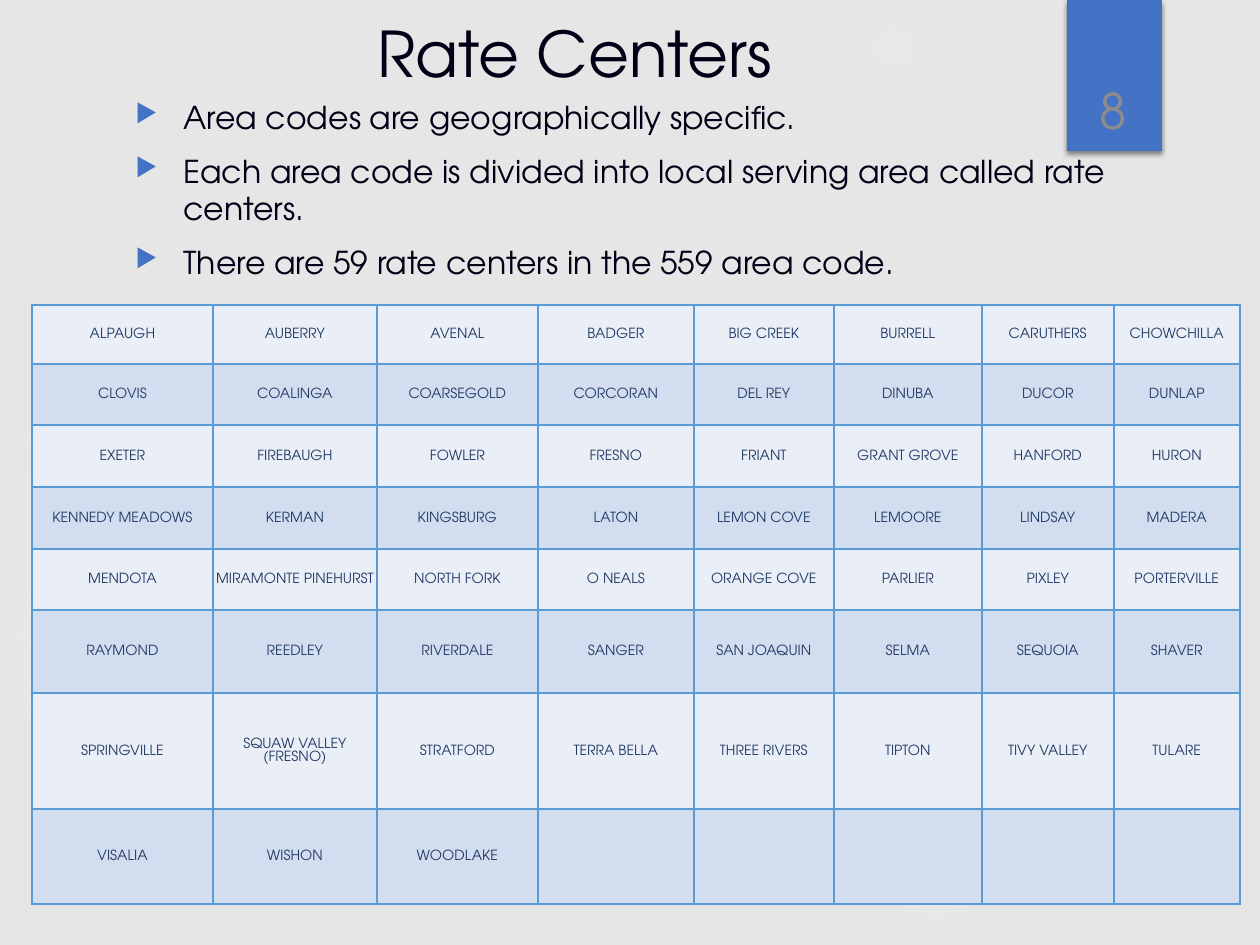
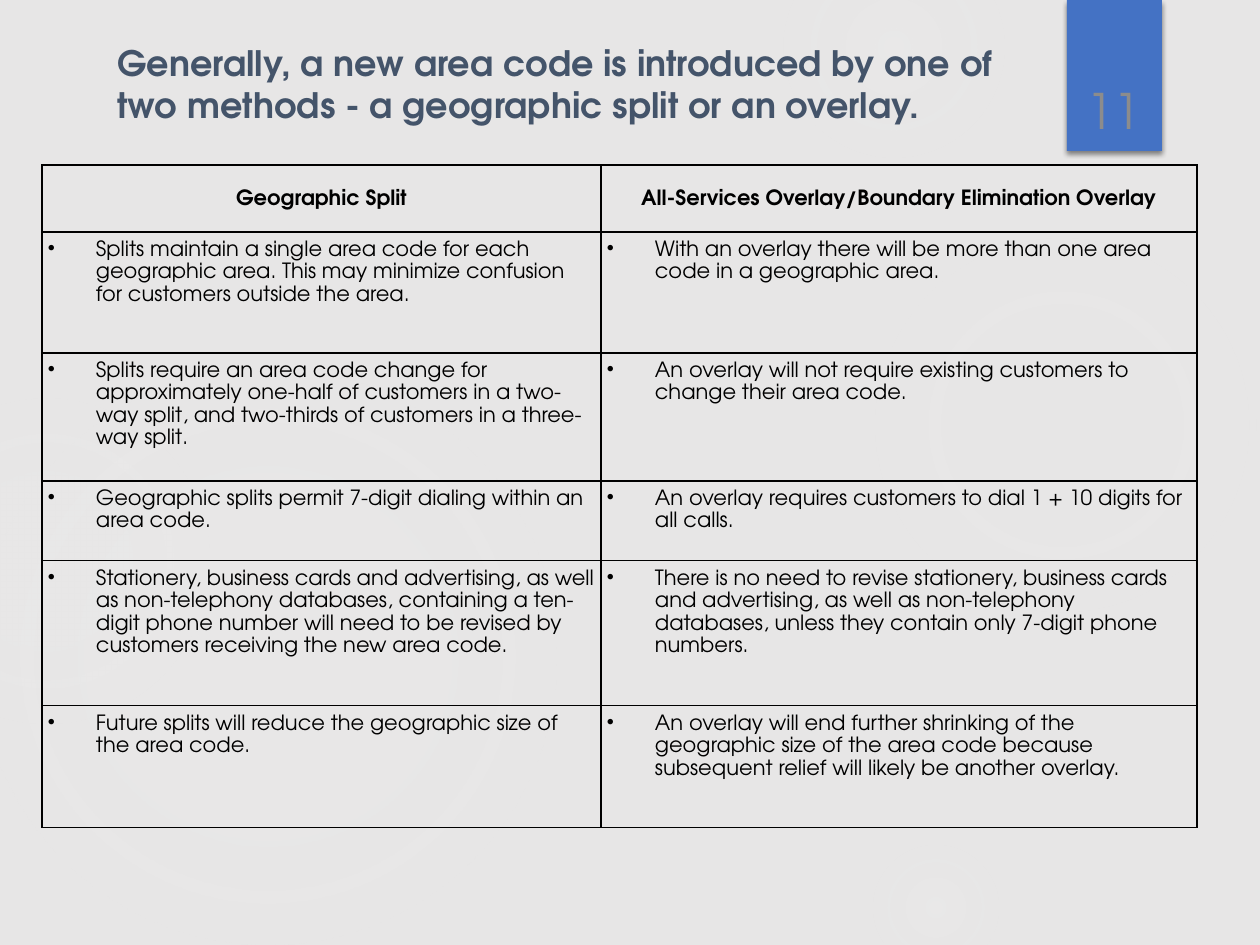
import pptx
import pptx.dml.color
import pptx.enum.shapes
import pptx.enum.text
import pptx.oxml
import pptx.oxml.ns
import pptx.util

RGBColor = pptx.dml.color.RGBColor
ALIGN = pptx.enum.text.PP_ALIGN
ANCHOR = pptx.enum.text.MSO_ANCHOR
SHAPE = pptx.enum.shapes.MSO_SHAPE

BACKGROUND = RGBColor(0xE7, 0xE6, 0xE6)
GLOW = RGBColor(0xF5, 0xF5, 0xF5)
BLUE = RGBColor(0x44, 0x72, 0xC4)
NAVY = RGBColor(0x00, 0x00, 0x16)
SLATE = RGBColor(0x44, 0x54, 0x6A)
GRAY = RGBColor(0x8C, 0x8C, 0x8C)
BLACK = RGBColor(0x00, 0x00, 0x00)
CENTER_TEXT = RGBColor(0x20, 0x38, 0x64)
CENTER_BORDER = RGBColor(0x5B, 0x9B, 0xD5)
CENTER_BANDS = [RGBColor(0xEA, 0xEF, 0xF7), RGBColor(0xD2, 0xDE, 0xEF)]

FONT = "TeX Gyre Adventor"
PX = 914400 / 126
NAMESPACE = pptx.oxml.ns.nsdecls("a")
INDENT = 48

GLOWS = [
    (868, 231, 388, [(0, 7), (36, 6), (69, 0)]),
    (784, -63, 220, [(0, 14), (36, 7), (73, 0)]),
    (868, 840, 136, [(0, 14), (36, 7), (66, 0)]),
    (-21, 368, 577, [(0, 11), (36, 10), (75, 0)]),
    (-116, 399, 325, [(0, 8), (36, 8), (72, 0)]),
]


def write(frame, lines, size, color, bold=False, align=ALIGN.LEFT, bullet="", after=0, spacing=1.0):
    frame.word_wrap = True
    for index, line in enumerate(lines):
        paragraph = frame.paragraphs[0] if index == 0 else frame.add_paragraph()
        paragraph.text = line
        paragraph.alignment = align
        paragraph.space_after = pptx.util.Pt(after)
        paragraph.line_spacing = spacing
        paragraph.font.name = FONT
        paragraph.font.size = pptx.util.Pt(size)
        paragraph.font.bold = bold
        paragraph.font.color.rgb = color
        if bullet:
            properties = paragraph._p.get_or_add_pPr()
            properties.set("marL", str(round(INDENT * PX)))
            properties.set("indent", str(round(-INDENT * PX)))
            if bullet == "▶":
                properties.append(pptx.oxml.parse_xml(
                    f'<a:buClr {NAMESPACE}><a:srgbClr val="{BLUE}"/></a:buClr>'))
                properties.append(pptx.oxml.parse_xml(f'<a:buSzPct {NAMESPACE} val="80000"/>'))
            properties.append(pptx.oxml.parse_xml(f'<a:buChar {NAMESPACE} char="{bullet}"/>'))


def add_grid(slide, left, top, widths, heights, border):
    table = slide.shapes.add_table(
        len(heights), len(widths), round(left * PX), round(top * PX),
        round(sum(widths) * PX), round(sum(heights) * PX)).table
    table.first_row = False
    table.horz_banding = False
    for column, width in zip(table.columns, widths):
        column.width = round(width * PX)
    for row, height in zip(table.rows, heights):
        row.height = round(height * PX)
    for cell in table.iter_cells():
        for side in ("lnL", "lnR", "lnT", "lnB"):
            cell._tc.get_or_add_tcPr().append(pptx.oxml.parse_xml(
                f'<a:{side} {NAMESPACE} w="12700"><a:solidFill>'
                f'<a:srgbClr val="{border}"/></a:solidFill></a:{side}>'))
    return table


presentation = pptx.Presentation()
presentation.slide_width = round(1260 * PX)
presentation.slide_height = round(945 * PX)

titles = [
    ("8", "Rate Centers", (100, 3, 950, 98), 36, NAVY, False, ALIGN.CENTER, ANCHOR.MIDDLE),
    ("11", "Generally, a new area code is introduced by one of \vtwo methods - a geographic split or an overlay.",
     (105, 35, 1040, 130), 20, SLATE, True, ALIGN.LEFT, ANCHOR.TOP),
]
for number, title, box, size, color, bold, align, anchor in titles:
    slide = presentation.slides.add_slide(presentation.slide_layouts[6])
    slide.background.fill.solid()
    slide.background.fill.fore_color.rgb = BACKGROUND

    for left, top, diameter, stops in GLOWS:
        glow = slide.shapes.add_shape(
            SHAPE.OVAL, round(left * PX), round(top * PX), round(diameter * PX), round(diameter * PX))
        glow.shadow.inherit = False
        glow.line.fill.background()
        stop_xml = "".join(
            f'<a:gs pos="{position * 1000}"><a:srgbClr val="{GLOW}">'
            f'<a:alpha val="{alpha * 1000}"/></a:srgbClr></a:gs>' for position, alpha in stops)
        glow._element.spPr.find(pptx.oxml.ns.qn("a:prstGeom")).addnext(pptx.oxml.parse_xml(
            f'<a:gradFill {NAMESPACE}><a:gsLst>{stop_xml}</a:gsLst><a:path path="circle">'
            '<a:fillToRect l="50000" t="50000" r="50000" b="50000"/></a:path></a:gradFill>'))

    ribbon = slide.shapes.add_shape(SHAPE.RECTANGLE, round(1067 * PX), 0, round(95 * PX), round(151 * PX))
    ribbon.shadow.inherit = False
    ribbon.fill.solid()
    ribbon.fill.fore_color.rgb = BLUE
    ribbon.line.fill.background()
    ribbon._element.spPr.find(pptx.oxml.ns.qn("a:effectLst")).append(pptx.oxml.parse_xml(
        f'<a:outerShdw {NAMESPACE} blurRad="38100" dist="25400" dir="5400000">'
        f'<a:srgbClr val="{BLACK}"><a:alpha val="45000"/></a:srgbClr></a:outerShdw>'))

    title_box = slide.shapes.add_textbox(*[round(length * PX) for length in box])
    title_box.text_frame.vertical_anchor = anchor
    write(title_box.text_frame, [title], size, color, bold, align)

    number_box = slide.shapes.add_textbox(*[round(length * PX) for length in (1070, 40, 87, 106)])
    number_box.text_frame.vertical_anchor = ANCHOR.BOTTOM
    write(number_box.text_frame, [number], 28, GRAY, align=ALIGN.CENTER)

centers_slide, methods_slide = presentation.slides

facts = [
    "Area codes are geographically specific.",
    "Each area code is divided into local serving area called rate centers.",
    "There are 59 rate centers in the 559 area code.",
]
facts_box = centers_slide.shapes.add_textbox(*[round(length * PX) for length in (123, 126, 1050, 127)])
facts_box.text_frame.vertical_anchor = ANCHOR.MIDDLE
write(facts_box.text_frame, facts, 18, NAVY, bullet="▶", after=9)

centers = [
    ["ALPAUGH", "AUBERRY", "AVENAL", "BADGER", "BIG CREEK", "BURRELL", "CARUTHERS", "CHOWCHILLA"],
    ["CLOVIS", "COALINGA", "COARSEGOLD", "CORCORAN", "DEL REY", "DINUBA", "DUCOR", "DUNLAP"],
    ["EXETER", "FIREBAUGH", "FOWLER", "FRESNO", "FRIANT", "GRANT GROVE", "HANFORD", "HURON"],
    ["KENNEDY MEADOWS", "KERMAN", "KINGSBURG", "LATON", "LEMON COVE", "LEMOORE", "LINDSAY", "MADERA"],
    ["MENDOTA", "MIRAMONTE PINEHURST", "NORTH FORK", "O NEALS", "ORANGE COVE", "PARLIER", "PIXLEY", "PORTERVILLE"],
    ["RAYMOND", "REEDLEY", "RIVERDALE", "SANGER", "SAN JOAQUIN", "SELMA", "SEQUOIA", "SHAVER"],
    ["SPRINGVILLE", "SQUAW VALLEY (FRESNO)", "STRATFORD", "TERRA BELLA", "THREE RIVERS", "TIPTON", "TIVY VALLEY", "TULARE"],
    ["VISALIA", "WISHON", "WOODLAKE", "", "", "", "", ""],
]
centers_table = add_grid(
    centers_slide, 32, 305, [181, 164, 161, 156, 140, 148, 132, 126],
    [59, 61, 62, 62, 61, 83, 116, 95], CENTER_BORDER)
for row_index, names in enumerate(centers):
    for column_index, name in enumerate(names):
        cell = centers_table.cell(row_index, column_index)
        cell.fill.solid()
        cell.fill.fore_color.rgb = CENTER_BANDS[row_index % 2]
        cell.vertical_anchor = ANCHOR.MIDDLE
        cell.margin_left = cell.margin_right = cell.margin_top = round(PX)
        cell.margin_bottom = 0
        write(cell.text_frame, [name], 8, CENTER_TEXT, align=ALIGN.CENTER)

methods = [
    ("Geographic Split", "All-Services Overlay/Boundary Elimination Overlay"),
    ("Splits maintain a single area code for each geographic area. This may minimize confusion for customers outside the area.",
     "With an overlay there will be more than one area code in a geographic area."),
    ("Splits require an area code change for approximately one-half of customers in a two-way split, and two-thirds of customers in a three-way split.",
     "An overlay will not require existing customers to change their area code."),
    ("Geographic splits permit 7-digit dialing within an area code.",
     "An overlay requires customers to dial 1 + 10 digits for all calls."),
    ("Stationery, business cards and advertising, as well as non-telephony databases, containing a ten-digit phone number will need to be revised by customers receiving the new area code.",
     "There is no need to revise stationery, business cards and advertising, as well as non-telephony databases, unless they contain only 7-digit phone numbers."),
    ("Future splits will reduce the geographic size of the area code.",
     "An overlay will end further shrinking of the geographic size of the area code because subsequent relief will likely be another overlay."),
]
methods_table = add_grid(methods_slide, 42, 165, [559, 596], [67, 121, 125, 80, 145, 122], BLACK)
for row_index, texts in enumerate(methods):
    heading = row_index == 0
    for column_index, text in enumerate(texts):
        cell = methods_table.cell(row_index, column_index)
        cell.fill.background()
        cell.vertical_anchor = ANCHOR.MIDDLE if heading else ANCHOR.TOP
        cell.margin_left = cell.margin_right = round((9 if heading else 6) * PX)
        cell.margin_top = cell.margin_bottom = round((0 if heading else 6) * PX)
        write(cell.text_frame, [text], 12, BLACK, bold=heading,
              align=ALIGN.CENTER if heading else ALIGN.LEFT,
              bullet="" if heading else "•", spacing=1.15)

presentation.save("out.pptx")
